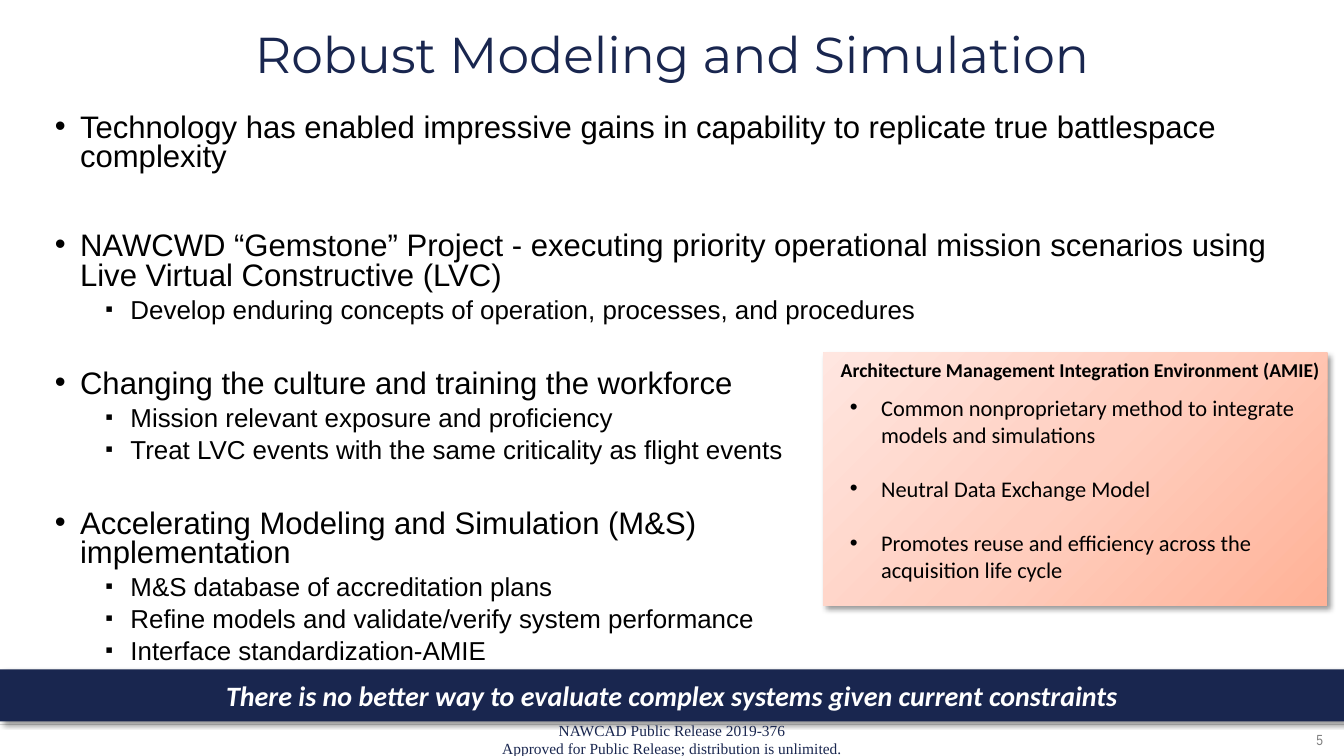
from copy import deepcopy
from dataclasses import dataclass

from lxml.etree import SubElement
from pptx import Presentation
from pptx.dml.color import RGBColor as Color
from pptx.enum.shapes import MSO_CONNECTOR as Connector, MSO_SHAPE as Preset
from pptx.enum.text import MSO_ANCHOR as Anchor, PP_ALIGN as Align
from pptx.oxml.ns import qn
from pptx.util import Emu, Inches, Pt


@dataclass(frozen=True)
class Theme:
    navy: str = "19264F"
    black: str = "000000"
    white: str = "FFFFFF"
    gray: str = "808080"
    rule: str = "D9D9D9"
    panel: tuple = ((0, "FFB297"), (0.5, "FFCEBF"), (1, "FFE6E0"))
    title_size: float = 36
    topic_size: float = 22.2
    detail_size: float = 18.5
    banner_size: float = 20
    panel_title_size: float = 14
    panel_size: float = 16
    release_size: float = 11
    page_size: float = 10.5


theme = Theme()
presentation = Presentation()
presentation.slide_width, presentation.slide_height = Inches(13.33), Inches(7.5)
slide = presentation.slides.add_slide(presentation.slide_layouts[6])

# Grid of 160 columns and 90 rows
column = presentation.slide_width / 160
row = presentation.slide_height / 90


def place(left, top, width, height):
    return (Emu(round(left * column)), Emu(round(top * row)),
            Emu(round(width * column)), Emu(round(height * row)))


def write(frame, text, size, font_name, color, align=Align.LEFT, bold=False,
          italic=False, bullet=None, indent=0, hanging=0, before=0, spacing=1.0):
    """Fill the empty first paragraph, or add one after the text so far."""
    paragraph = frame.add_paragraph() if frame.text else frame.paragraphs[0]
    frame.word_wrap = True
    paragraph.text = text
    paragraph.alignment = align
    paragraph.line_spacing = spacing
    paragraph.space_before = Pt(before)
    if bullet:
        properties = paragraph._p.get_or_add_pPr()
        properties.set("marL", str(Inches(indent)))
        properties.set("indent", str(-Inches(hanging)))
        if bullet == "▪":
            SubElement(properties, qn("a:buSzPct"), val="85000")
        SubElement(properties, qn("a:buFont"), typeface="Arial")
        SubElement(properties, qn("a:buChar"), char=bullet)
    font = paragraph.font
    font.name, font.size = font_name, Pt(size)
    font.bold, font.italic = bold, italic
    font.color.rgb = Color.from_string(color)


# Footer rule and page number
rule_left, rule_top, rule_width, _ = place(0, 86.2, 160, 0)
rule = slide.shapes.add_connector(Connector.STRAIGHT, rule_left, rule_top, rule_width, rule_top)
rule.line.color.rgb = Color.from_string(theme.rule)
rule.line.width = Pt(0.5)
SubElement(rule._element.spPr, qn("a:effectLst"))
page_number = slide.shapes.add_textbox(*place(155, 86.4, 4.2, 3.4))
write(page_number.text_frame, "5", theme.page_size, "Arial Narrow", theme.gray, Align.CENTER)

# Title
title = slide.shapes.add_textbox(*place(14, 2.5, 132, 8.5))
title.text_frame.vertical_anchor = Anchor.MIDDLE
write(title.text_frame, "Robust Modeling and Simulation", theme.title_size,
      "Montserrat", theme.navy, Align.CENTER, spacing=0.9)

# Topics, each with the gap above it and its details
topics = [
    (0, "Technology has enabled impressive gains in capability to replicate "
        "true battlespace complexity", []),
    (42, "NAWCWD “Gemstone” Project - executing priority operational mission "
         "scenarios using Live Virtual Constructive (LVC)",
     ["Develop enduring concepts of operation, processes, and procedures"]),
    (33, "Changing the culture and training the workforce",
     ["Mission relevant exposure and proficiency",
      "Treat LVC events with the same criticality as flight events"]),
    (33, "Accelerating Modeling and Simulation (M&S)\nimplementation",
     ["M&S database of accreditation plans",
      "Refine models and validate/verify system performance",
      "Interface standardization-AMIE"]),
]
body = slide.shapes.add_textbox(*place(5.35, 13, 149.4, 67.3)).text_frame
for gap, topic, details in topics:
    write(body, topic, theme.topic_size, "Arial", theme.black, bullet="•",
          indent=0.25, hanging=0.25, before=gap, spacing=0.8)
    for detail in details:
        write(body, detail, theme.detail_size, "Arial", theme.black, bullet="▪",
              indent=0.75, hanging=0.25, before=5, spacing=0.8)

# Banner and panel shapes
banner = slide.shapes.add_shape(Preset.RECTANGLE, *place(0, 79.7, 160, 6.2))
banner.fill.solid()
banner.fill.fore_color.rgb = Color.from_string(theme.navy)
panel = slide.shapes.add_shape(Preset.RECTANGLE, *place(98, 42, 60, 30.1))
panel.fill.gradient()
panel.fill.gradient_angle = 135
stop_list = panel._element.spPr.find(qn("a:gradFill")).find(qn("a:gsLst"))
stop_list.append(deepcopy(stop_list[0]))
for stop, (position, color) in zip(panel.fill.gradient_stops, theme.panel):
    stop.position = position
    stop.color.rgb = Color.from_string(color)

# Soft shadow down to the right
for shape in (banner, panel):
    shape.line.fill.background()
    shape.shadow.inherit = False
    effects = shape._element.spPr.find(qn("a:effectLst"))
    shadow = SubElement(effects, qn("a:outerShdw"), blurRad=str(Pt(4)), dist=str(Pt(3)),
                        dir="2700000", algn="tl", rotWithShape="0")
    shadow_color = SubElement(shadow, qn("a:srgbClr"), val=theme.black)
    SubElement(shadow_color, qn("a:alpha"), val="40000")

# Banner message
banner.text_frame.vertical_anchor = Anchor.MIDDLE
write(banner.text_frame,
      "There is no better way to evaluate complex systems given current constraints",
      theme.banner_size, "Calibri", theme.white, Align.CENTER, bold=True, italic=True)

# Panel heading and points
heading = slide.shapes.add_textbox(*place(98.9, 42, 61, 6.8))
write(heading.text_frame, "Architecture Management Integration Environment (AMIE)",
      theme.panel_title_size, "Calibri", theme.black, bold=True)
points = [
    "Common nonproprietary method to integrate models and simulations",
    "Neutral Data Exchange Model",
    "Promotes reuse and efficiency across the acquisition life cycle",
]
point_list = slide.shapes.add_textbox(*place(100, 46.3, 56, 23.9)).text_frame
for index, point in enumerate(points):
    write(point_list, point, theme.panel_size, "Calibri", theme.black, bullet="•",
          indent=0.31, hanging=0.31, before=19.5 if index else 0)

# Release statement
release = slide.shapes.add_textbox(*place(53, 85.25, 54, 4.75))
write(release.text_frame,
      "NAWCAD Public Release 2019-376\nApproved for Public Release; distribution is unlimited.",
      theme.release_size, "Times New Roman", theme.navy, Align.CENTER)

presentation.save("out.pptx")
